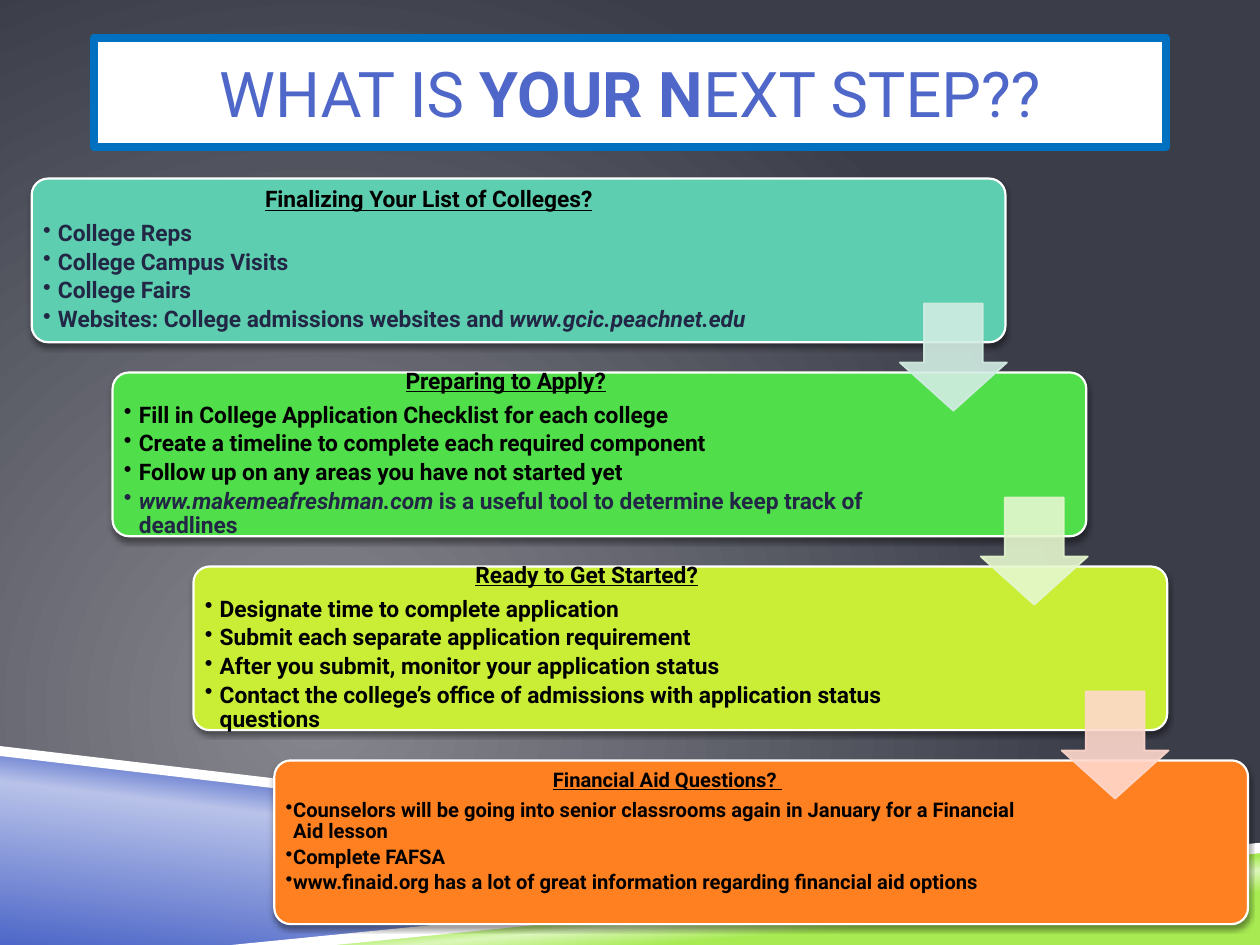
"""Build the college next-steps slide with four cascading cards."""
from lxml import etree
from pptx import Presentation
from pptx import util as u
from pptx.dml.color import RGBColor
from pptx.enum import shapes, text
from pptx.oxml import ns, parse_xml

COLOURS = {
    "white": "FFFFFF", "black": "000000", "navy": "212745", "blue": "4E67C8",
    "pale_blue": "B8C2E9", "green": "A7EA52", "pale_green": "DCF7BA",
    "border": "0070C0", "grey": "86878E", "slate": "3B3D49",
    "teal": "5DCEAF", "grass": "50DE4A", "lime": "CAEE36", "orange": "FF8021",
    "pale_teal": "D2EDE3", "pale_lime": "E5F7CE", "peach": "FFD8CC",
}
RGB = {name: RGBColor.from_string(value) for name, value in COLOURS.items()}


def paint_gradient(fill, element, stops, direction):
    fill.gradient()
    gradient = element.find(".//" + ns.qn("a:gradFill"))
    gradient.clear()
    stop_xml = "".join(
        f'<a:gs pos="{place * 1000}"><a:srgbClr val="{COLOURS[name]}"/></a:gs>'
        for place, name in stops)
    source = parse_xml(
        f'<a:gradFill {ns.nsdecls("a")}><a:gsLst>{stop_xml}</a:gsLst>{direction}</a:gradFill>')
    gradient.extend(list(source))


def add_span(para, words, colour, **formats):
    span = para.add_run()
    span.text = words
    span.font.color.rgb = RGB[colour]
    for name, value in {"name": "Roboto", **formats}.items():
        setattr(span.font, name, value)


deck = Presentation()
deck.slide_width, deck.slide_height = u.Cm(25.4), u.Cm(19.05)
page = deck.slides.add_slide(deck.slide_layouts[6])
paint_gradient(
    page.background.fill, page.element, [(0, "grey"), (100, "slate")],
    '<a:path path="circle"><a:fillToRect l="50000" t="100000" r="100000" b="50000"/></a:path>')

bands = [
    ([(0, 15.16), (20.12, 17.58), (5.08, 19.05), (0, 19.05)],
     [(0, "blue"), (52, "pale_blue"), (66, "blue")], 277),
    ([(5.03, 19.05), (25.4, 17.07), (25.4, 19.05)],
     [(28, "green"), (40, "pale_green"), (48, "green")], 265),
    ([(0, 15.04), (0, 15.24), (20.07, 17.6), (21.13, 17.53)], None, None),
    ([(25.4, 16.99), (4.67, 19.05), (6.76, 19.05), (25.4, 17.2)], None, None),
]
for points, stops, angle in bands:
    corners = [(u.Cm(x), u.Cm(y)) for x, y in points]
    builder = page.shapes.build_freeform(*corners[0])
    builder.add_line_segments(corners[1:], close=True)
    band = builder.convert_to_shape()
    band.shadow.inherit = False
    band.line.fill.background()
    if stops:
        paint_gradient(band.fill, band.element, stops,
                       f'<a:lin ang="{angle * 60000}" scaled="0"/>')
    else:
        band.fill.solid()
        band.fill.fore_color.rgb = RGB["white"]

title = page.shapes.add_shape(
    shapes.MSO_SHAPE.RECTANGLE, u.Cm(1.9), u.Cm(0.76), u.Cm(21.6), u.Cm(2.21))
title.shadow.inherit = False
title.fill.solid()
title.fill.fore_color.rgb = RGB["white"]
title.line.color.rgb = RGB["border"]
title.line.width = u.Pt(4.5)
title.text_frame.margin_left = title.text_frame.margin_right = 0
title.text_frame.vertical_anchor = text.MSO_ANCHOR.MIDDLE
para = title.text_frame.paragraphs[0]
para.alignment = text.PP_ALIGN.CENTER
for words, bold in [("WHAT IS ", False), ("YOUR N", True), ("EXT STEP??", False)]:
    add_span(para, words, "blue", size=u.Pt(36), bold=bold)

cards = [
    {"fill": "teal", "width": 15.8, "size": 13, "indent": 0.3, "bottom": 0.13,
     "heading": "Finalizing Your List of Colleges?",
     "bullets": [
         [("College Reps", "navy", False)],
         [("College Campus Visits", "navy", False)],
         [("College Fairs", "navy", False)],
         [("Websites: College admissions websites and ", "navy", False),
          ("www.gcic.peachnet.edu", "navy", True)]]},
    {"fill": "grass", "width": 15.65, "size": 13, "indent": 0.3, "bottom": 0.13,
     "heading": "Preparing to Apply?",
     "bullets": [
         [("Fill in College Application Checklist for each college", "black", False)],
         [("Create a timeline to complete each required component", "black", False)],
         [("Follow up on any areas you have not started yet", "black", False)],
         [("www.makemeafreshman.com", "navy", True),
          (" is a useful tool to determine keep track of deadlines", "navy", False)]]},
    {"fill": "lime", "width": 15.65, "size": 13, "indent": 0.3, "bottom": 0.13,
     "heading": "Ready to Get Started?",
     "bullets": [
         [("Designate time to complete application", "black", False)],
         [("Submit each separate application requirement", "black", False)],
         [("After you submit, monitor your application status", "black", False)],
         [("Contact the college’s office of admissions with application status questions",
           "black", False)]]},
    {"fill": "orange", "width": 15.65, "size": 11.5, "indent": 0.15, "bottom": 0.55,
     "heading": "Financial Aid Questions? ",
     "bullets": [
         [("Counselors will be going into senior classrooms again in January for a "
           "Financial Aid lesson", "black", False)],
         [("Complete FAFSA", "black", False)],
         [("www.finaid.org has a lot of great information regarding financial aid options",
           "black", False)]]},
]
FIRST_LEFT, FIRST_TOP, STEP_X, STEP_Y = 0.64, 3.6, 1.63, 3.91

for index, card in enumerate(cards):
    left, top = FIRST_LEFT + index * STEP_X, FIRST_TOP + index * STEP_Y
    panel = page.shapes.add_shape(
        shapes.MSO_SHAPE.ROUNDED_RECTANGLE, u.Cm(left), u.Cm(top), u.Cm(19.63), u.Cm(3.3))
    panel.adjustments[0] = 0.1
    panel.fill.solid()
    panel.fill.fore_color.rgb = RGB[card["fill"]]
    panel.line.color.rgb = RGB["white"]
    panel.line.width = u.Pt(1.25)
    panel.shadow.inherit = False
    panel.element.spPr.find(ns.qn("a:effectLst")).append(parse_xml(
        f'<a:outerShdw {ns.nsdecls("a")} blurRad="{u.Pt(3)}" dist="{u.Pt(2)}" dir="5400000" '
        f'rotWithShape="0"><a:srgbClr val="{COLOURS["black"]}"><a:alpha val="40000"/>'
        '</a:srgbClr></a:outerShdw>'))

    box = page.shapes.add_textbox(
        u.Cm(left + 0.1), u.Cm(top + 0.09), u.Cm(card["width"]), u.Cm(3.12))
    frame = box.text_frame
    margin = u.Cm(0.13)
    for name, value in {
            "word_wrap": True, "vertical_anchor": text.MSO_ANCHOR.MIDDLE,
            "margin_left": margin, "margin_right": margin, "margin_top": margin,
            "margin_bottom": u.Cm(card["bottom"])}.items():
        setattr(frame, name, value)
    size = u.Pt(card["size"])
    para = frame.paragraphs[0]
    para.alignment = text.PP_ALIGN.CENTER
    para.line_spacing = 0.9
    para.space_after = u.Pt(card["size"] * 0.4)
    add_span(para, card["heading"], "black", size=size, bold=True, underline=True)
    for spans in card["bullets"]:
        para = frame.add_paragraph()
        properties = para._p.get_or_add_pPr()
        properties.set("marL", str(u.Cm(card["indent"])))
        properties.set("indent", str(-u.Cm(card["indent"])))
        etree.SubElement(properties, ns.qn("a:buChar")).set("char", "•")
        para.line_spacing = 0.9
        para.space_after = u.Pt(card["size"] * 0.18)
        for words, colour, italic in spans:
            add_span(para, words, colour, size=size, bold=True, italic=italic)

for index, colour in enumerate(["pale_teal", "pale_lime", "peach"]):
    arrow = page.shapes.add_shape(
        shapes.MSO_SHAPE.DOWN_ARROW, u.Cm(FIRST_LEFT + 17.5 + index * STEP_X),
        u.Cm(FIRST_TOP + 2.52 + index * STEP_Y), u.Cm(2.16), u.Cm(2.16))
    arrow.shadow.inherit = False
    arrow.adjustments[0], arrow.adjustments[1] = 0.45, 0.55
    arrow.adjustments[0], arrow.adjustments[1] = 0.55, 0.45
    arrow.fill.solid()
    arrow.fill.fore_color.rgb = RGB[colour]
    arrow.line.color.rgb = RGB[colour]
    arrow.line.width = u.Pt(1)
    for tint in arrow.element.spPr.iter(ns.qn("a:srgbClr")):
        etree.SubElement(tint, ns.qn("a:alpha")).set("val", "90000")

deck.save("out.pptx")
